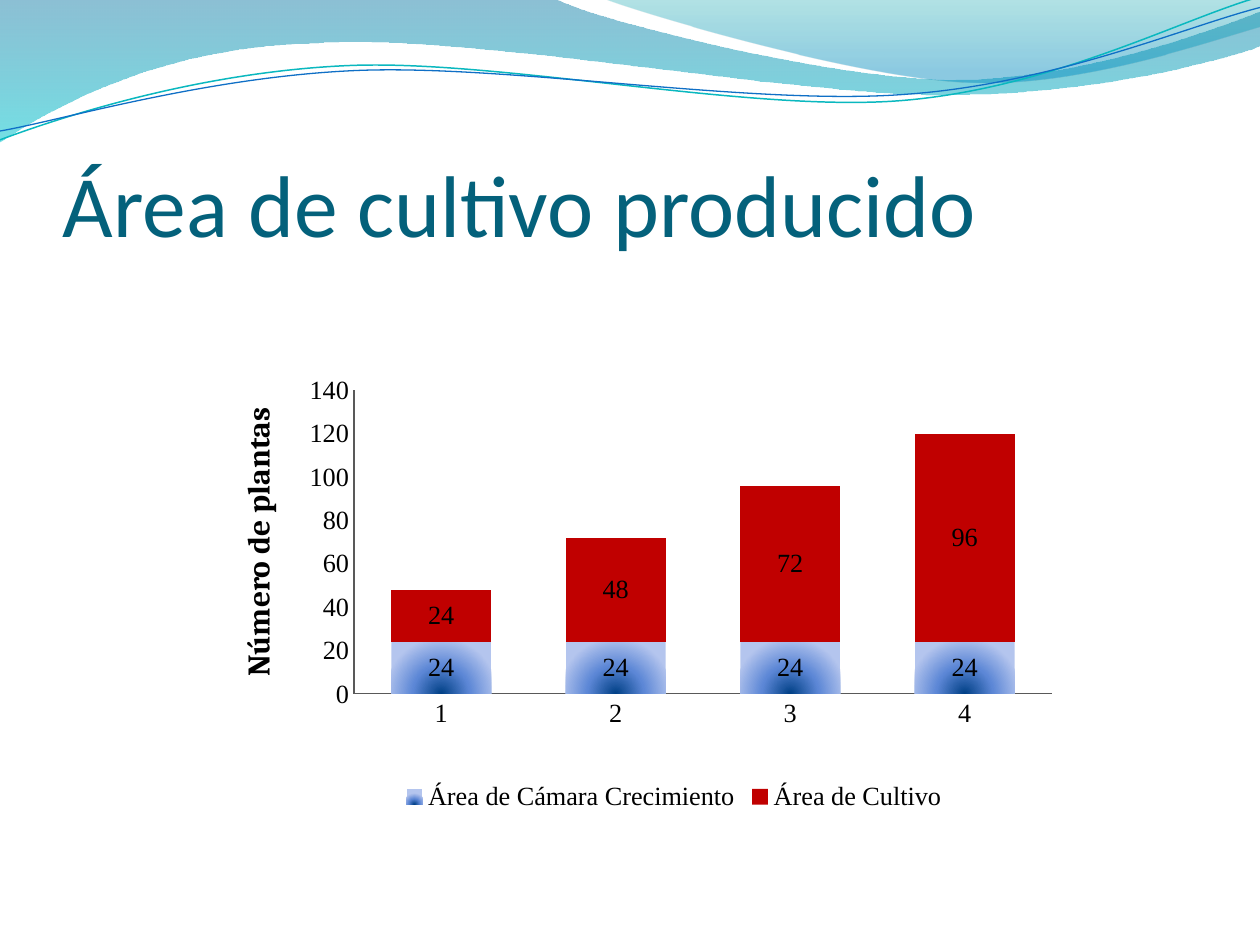
import math

import pptx
import pptx.chart.data
import pptx.dml.color
import pptx.enum.chart
import pptx.enum.text
import pptx.oxml
import pptx.oxml.ns
import pptx.util
from lxml import etree

Inches, Pt = pptx.util.Inches, pptx.util.Pt
RGBColor = pptx.dml.color.RGBColor
qn = pptx.oxml.ns.qn

TITLE_TEAL = RGBColor(0x04, 0x61, 0x7B)
BLACK = RGBColor(0, 0, 0)
RED = RGBColor(0xC0, 0, 0)
AXIS_GRAY = RGBColor(0x59, 0x59, 0x59)
LINE_TEAL = RGBColor(0x0A, 0xB8, 0xBF)
LINE_BLUE = RGBColor(0x0F, 0x6F, 0xC6)
WAVE_BLUE = RGBColor(0x00, 0x74, 0xA1)
WAVE_CYAN = RGBColor(0x00, 0xC6, 0xCF)
CREST_TEAL = RGBColor(0x00, 0xA1, 0xA9)
CREST_BLUE = RGBColor(0x00, 0x8B, 0xBF)
BAR_DARK = RGBColor(0x00, 0x40, 0x86)
BAR_MID = RGBColor(0x5C, 0x87, 0xD6)
BAR_LIGHT = RGBColor(0xB4, 0xC5, 0xEE)

DOWNWARD = '<a:lin ang="5400000" scaled="0"/>'
FROM_BASE = '<a:path path="circle"><a:fillToRect l="50000" t="100000" r="50000"/></a:path>'
TILT = 357.3


def turn(point, center, degrees):
    """Turn a point about a center, clockwise on the slide."""
    dx, dy = point[0] - center[0], point[1] - center[1]
    c, s = math.cos(math.radians(degrees)), math.sin(math.radians(degrees))
    return center[0] + dx * c - dy * s, center[1] + dx * s + dy * c


class Deck:
    def __init__(self):
        self.prs = pptx.Presentation()
        self.prs.slide_width, self.prs.slide_height = Inches(10), Inches(7.5)
        self.s = self.prs.slides.add_slide(self.prs.slide_layouts[6])

    def gradient(self, fill, spPr, stops, direction):
        """Set a gradient; each stop is (position %, colour, opacity %)."""
        fill.gradient()
        old = spPr.find(qn("a:gradFill"))
        gs = "".join(
            f'<a:gs pos="{pos * 1000}"><a:srgbClr val="{color}">'
            f'<a:alpha val="{alpha * 1000}"/></a:srgbClr></a:gs>'
            for pos, color, alpha in stops)
        new = pptx.oxml.parse_xml(
            f'<a:gradFill {pptx.oxml.ns.nsdecls("a")} rotWithShape="1">'
            f'<a:gsLst>{gs}</a:gsLst>{direction}</a:gradFill>')
        spPr.replace(old, new)

    def outline(self, parts, close):
        """Draw parts of one point (line) or three points (Bezier curve)."""
        pts = [(Inches(x), Inches(y)) for part in parts for x, y in part]
        fb = self.s.shapes.build_freeform(*pts[0], scale=1.0)
        fb.add_line_segments(pts[1:], close=close)
        sp = fb.convert_to_shape()
        sp.shadow.inherit = False
        segments = iter(list(sp._element.iter(qn("a:lnTo"))))
        for part in parts[1:]:
            first, *others = [next(segments) for _ in part]
            if others:
                first.tag = qn("a:cubicBezTo")
            for seg in others:
                first.append(seg[0])
                seg.getparent().remove(seg)
        return sp

    def wave(self, parts, stops):
        sp = self.outline(parts, True)
        sp.line.fill.background()
        self.gradient(sp.fill, sp._element.spPr, stops, DOWNWARD)

    def curve(self, parts, center, color, width):
        level = [[turn(pt, center, -TILT) for pt in part] for part in parts]
        sp = self.outline(level, False)
        sp.rotation = TILT
        sp.fill.background()
        sp.line.color.rgb = color
        sp.line.width = Pt(width)

    def text(self, box, text, size, font, color, bold=False, wrap=True):
        sp = self.s.shapes.add_textbox(*map(Inches, box))
        tf = sp.text_frame
        tf.word_wrap = wrap
        tf.text = text
        f = tf.paragraphs[0].runs[0].font
        f.size, f.name, f.bold, f.color.rgb = Pt(size), font, bold, color
        return sp

    def stacked_chart(self, box, cats, series, plot):
        data = pptx.chart.data.CategoryChartData()
        data.categories = cats
        for name, values in series:
            data.add_series(name, values)
        kind = pptx.enum.chart.XL_CHART_TYPE.COLUMN_STACKED
        chart = self.s.shapes.add_chart(kind, *map(Inches, box), data).chart
        chart.has_title = False
        f = chart.font
        f.size, f.name, f.color.rgb = Pt(15), "Times New Roman", BLACK

        # Axes
        for axis in (chart.category_axis, chart.value_axis):
            axis.has_major_gridlines = False
            axis.major_tick_mark = pptx.enum.chart.XL_TICK_MARK.NONE
            axis.format.line.color.rgb = AXIS_GRAY
        chart.value_axis.minimum_scale = 0
        chart.value_axis.maximum_scale = 140
        chart.value_axis.major_unit = 20

        # Legend
        chart.has_legend = True
        chart.legend.position = pptx.enum.chart.XL_LEGEND_POSITION.BOTTOM
        chart.legend.include_in_layout = False

        # Bars
        bars = chart.plots[0]
        bars.gap_width, bars.overlap, bars.vary_by_categories = 75, 100, False
        for ser in bars.series:
            ser.data_labels.show_value = True

        # Plot area position
        area = chart._chartSpace.chart.plotArea
        for old in area.findall(qn("c:layout")):
            area.remove(old)
        layout = etree.Element(qn("c:layout"))
        manual = etree.SubElement(layout, qn("c:manualLayout"))
        items = [("layoutTarget", "inner"), ("xMode", "edge"), ("yMode", "edge")]
        for tag, val in items + list(zip("xywh", plot)):
            etree.SubElement(manual, qn(f"c:{tag}"), val=str(val))
        area.insert(0, layout)
        return chart


def main():
    deck = Deck()

    # Wave band across the top
    deck.wave([
        [(0, 0)], [(4.4, -0.01)],
        [(4.76, 0.17), (6.64, 0.63), (7.58, 0.63)],
        [(8.53, 0.63), (9.58, 0.26), (10, 0.09)], [(10.01, 0.36)],
        [(9.83, 0.44), (8.7, 0.76), (7.46, 0.75)],
        [(6.22, 0.75), (3.82, 0.28), (2.57, 0.34)],
        [(1.29, 0.36), (0.46, 0.83), (-0.01, 1.13)], [(0, 0)],
    ], [(0, WAVE_BLUE, 45), (100, WAVE_CYAN, 55)])
    deck.wave([
        [(4.79, -0.01)], [(5.09, 0.11), (6.82, 0.62), (7.69, 0.65)],
        [(8.56, 0.69), (9.61, 0.32), (10, 0.21)], [(10, 0)], [(4.79, -0.01)],
    ], [(0, CREST_TEAL, 30), (80, CREST_BLUE, 45)])
    deck.curve([
        [(0, 1.11)], [(0.48, 0.93), (1.58, 0.57), (2.77, 0.52)],
        [(3.95, 0.47), (5.93, 0.89), (7.13, 0.8)],
        [(8.33, 0.71), (9.38, 0.15), (9.98, -0.02)],
    ], (4.99, 0.58), LINE_TEAL, 0.85)
    deck.curve([
        [(0, 1.04)], [(0.47, 0.96), (1.64, 0.61), (2.83, 0.56)],
        [(4.03, 0.51), (5.97, 0.84), (7.17, 0.75)],
        [(8.36, 0.67), (9.41, 0.21), (10, 0.06)],
    ], (5, 0.59), LINE_BLUE, 0.75)

    # Title
    title = deck.text((0.5, 0.77, 9, 1.25), "Área de cultivo producido",
                      50, "Calibri", TITLE_TEAL)
    tf = title.text_frame
    tf.vertical_anchor = pptx.enum.text.MSO_ANCHOR.BOTTOM
    tf.margin_left = tf.margin_right = tf.margin_bottom = 0

    # Chart
    chart = deck.stacked_chart(
        (2.11, 2.89, 6.48, 3.59), ["1", "2", "3", "4"],
        [("Área de Cámara Crecimiento", [24] * 4),
         ("Área de Cultivo", [24, 48, 72, 96])],
        (0.108, 0.058, 0.855, 0.671))
    chamber, crop = chart.plots[0].series
    deck.gradient(chamber.format.fill, chamber._element.spPr,
                  [(0, BAR_DARK, 100), (50, BAR_MID, 100), (100, BAR_LIGHT, 100)],
                  FROM_BASE)
    crop.format.fill.solid()
    crop.format.fill.fore_color.rgb = RED

    # Value axis caption, read upwards
    caption = deck.text((1.84, 3.12, 0.5, 2.35), "Número de plantas",
                        18, "Cambria", BLACK, bold=True, wrap=False)
    caption.rotation = 180
    caption.text_frame._txBody.bodyPr.set("vert", "vert")
    caption.text_frame.auto_size = pptx.enum.text.MSO_AUTO_SIZE.SHAPE_TO_FIT_TEXT

    deck.prs.save("out.pptx")


if __name__ == "__main__":
    main()
